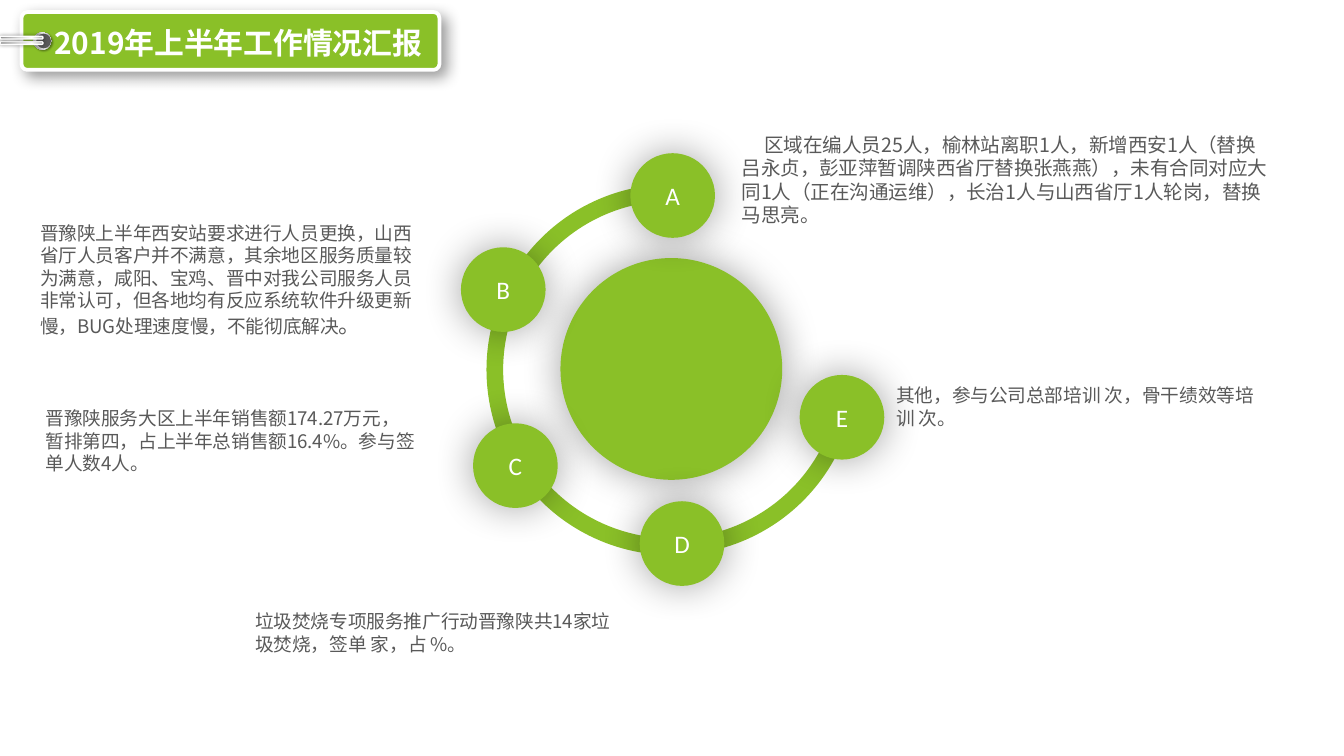
from lxml.etree import SubElement
from pptx import Presentation
from pptx.dml.color import RGBColor
from pptx.enum.shapes import MSO_SHAPE
from pptx.enum.text import MSO_ANCHOR, MSO_AUTO_SIZE, PP_ALIGN
from pptx.oxml.ns import qn
from pptx.util import Inches, Pt

CELL = 0.1  # side of one grid cell in inches: the slide is 100 columns wide
GREEN = RGBColor(0x8A, 0xC0, 0x28)
GREY = RGBColor(0x59, 0x59, 0x59)
WHITE = RGBColor(0xFF, 0xFF, 0xFF)
CJK = "Noto Sans CJK SC"
LATIN = "Calibri"

RIM_STOPS = [(0, "FFFFFF"), (17, "A6A6A6"), (35, "F2F2F2"),
             (55, "A6A6A6"), (75, "F2F2F2"), (100, "A6A6A6")]
PIN_STOPS = [(0, "808080"), (23, "A6A6A6"), (52, "D9D9D9"),
             (74, "FFFFFF"), (100, "A6A6A6")]

NODE_SIZE = 6.3
NODES = [("E", 59.5, 27.9), ("D", 47.6, 37.3), ("C", 35.2, 31.5),
         ("B", 34.3, 18.4), ("A", 46.9, 11.4)]

# column, row, width, font size, first-line indent, text, larger ending
CAPTIONS = [
    (54.2, 9.4, 41.2, 10.5, 1.7,
     "区域在编人员25人，榆林站离职1人，新增西安1人（替换吕永贞，彭亚萍暂调陕西省厅替换张燕燕），"
     "未有合同对应大同1人（正在沟通运维），长治1人与山西省厅1人轮岗，替换马思亮。", ""),
    (65.7, 28.1, 29.7, 10, 0,
     "其他，参与公司总部培训 次，骨干绩效等培训 次。", ""),
    (18, 44.9, 29.7, 10, 0,
     "垃圾焚烧专项服务推广行动晋豫陕共14家垃圾焚烧，签单 家，占 %。", ""),
    (2.4, 29.8, 29.7, 10, 0,
     "晋豫陕服务大区上半年销售额174.27万元，暂排第四，占上半年总销售额16.4%。"
     "参与签单人数4人。", ""),
    (2, 16, 29.7, 10, 0,
     "晋豫陕上半年西安站要求进行人员更换，山西省厅人员客户并不满意，其余地区服务质量较为满意，"
     "咸阳、宝鸡、晋中对我公司服务人员非常认可，但各地均有反应系统软件升级更新慢，"
     "BUG处理速度慢，不能彻底解决", "。"),
]


def grid(*cells):
    return [Inches(c * CELL) for c in cells]


def add_shadow(sp, alpha, blur, dist=0, angle=0):
    """Add a black outer shadow: alpha in percent, lengths in points."""
    effects = sp._element.spPr.find(qn("a:effectLst"))
    shadow = SubElement(effects, qn("a:outerShdw"), blurRad=str(Pt(blur)),
                        dist=str(Pt(dist)), dir=str(angle * 60000),
                        algn="ctr", rotWithShape="0")
    color = SubElement(shadow, qn("a:srgbClr"), val="000000")
    SubElement(color, qn("a:alpha"), val=str(alpha * 1000))


def add_solid(s, kind, box, color=GREEN, rotation=0, adjust=()):
    sp = s.shapes.add_shape(kind, *grid(*box))
    sp.shadow.inherit = False
    sp.fill.solid()
    sp.fill.fore_color.rgb = color
    sp.line.fill.background()
    sp.rotation = rotation
    for i, value in enumerate(adjust):
        sp.adjustments[i] = value
    return sp


def set_outline(sp, width):
    sp.line.color.rgb = WHITE
    sp.line.width = Pt(width)


def set_gradient(sp, stops, angle):
    sp.fill.gradient()
    sp.fill.gradient_angle = 360 - angle
    gs_list = sp._element.spPr.find(qn("a:gradFill")).find(qn("a:gsLst"))
    for gs in list(gs_list):
        gs_list.remove(gs)
    for position, color in stops:
        gs = SubElement(gs_list, qn("a:gs"), pos=str(position * 1000))
        SubElement(gs, qn("a:srgbClr"), val=color)


def format_run(r, size, color, font=CJK, bold=False):
    r.font.size = Pt(size)
    r.font.bold = bold
    r.font.color.rgb = color
    r.font.name = font
    SubElement(r._r.get_or_add_rPr(), qn("a:ea"), typeface=font)


def add_node(s, letter, col, row):
    sp = add_solid(s, MSO_SHAPE.OVAL, (col, row, NODE_SIZE, NODE_SIZE))
    add_shadow(sp, 37, 22)
    tf = sp.text_frame
    tf.text = letter
    tf.vertical_anchor = MSO_ANCHOR.MIDDLE
    p = tf.paragraphs[0]
    p.alignment = PP_ALIGN.CENTER
    format_run(p.runs[0], 13.5, WHITE, LATIN)


def add_caption(s, col, row, width, size, indent, text, ending):
    tf = s.shapes.add_textbox(*grid(col, row, width, 10)).text_frame
    tf.word_wrap = True
    tf.text = text
    p = tf.paragraphs[0]
    if indent:
        p._p.get_or_add_pPr().set("indent", str(Inches(indent * CELL)))
    format_run(p.runs[0], size, GREY)
    if ending:
        r = p.add_run()
        r.text = ending
        format_run(r, 12, GREY)


def add_ring(s):
    hub = add_solid(s, MSO_SHAPE.OVAL, (41.7, 19.2, 16.5, 16.5))
    add_shadow(hub, 37, 22)
    add_solid(s, MSO_SHAPE.BLOCK_ARC, (36.2, 13.7, 27.6, 27.6),
              rotation=270, adjust=(61.485, 214.427, 0.045))
    for node in NODES:
        add_node(s, *node)


def add_tag(s):
    """Draw the title tag with its eyelet and the two pins through it."""
    tag = add_solid(s, MSO_SHAPE.ROUNDED_RECTANGLE, (1.6, 0.9, 31.1, 4.3),
                    adjust=(0.1,))
    set_outline(tag, 2)
    add_shadow(tag, 40, 8, 4, 45)

    rim = add_solid(s, MSO_SHAPE.OVAL, (2.5, 2.4, 1.3, 1.3), rotation=270)
    set_gradient(rim, RIM_STOPS, 45)
    add_shadow(rim, 40, 1, 1, 45)
    add_solid(s, MSO_SHAPE.OVAL, (2.7, 2.5, 1.1, 1.1), GREY, 270)

    for row in (1.6, 1.2):
        pin = add_solid(s, MSO_SHAPE.ROUNDED_RECTANGLE, (1.5, row, 0.2, 3.2),
                        rotation=270, adjust=(0.5,))
        set_gradient(pin, PIN_STOPS, 90)
        set_outline(pin, 0.75)
        add_shadow(pin, 40, 2)


def set_title(s, text):
    title = s.shapes.title
    title.left, title.top, title.width, title.height = grid(2.1, 1.3, 31.3, 3.7)
    s.shapes._spTree.append(title._element)  # bring in front of the tag
    tf = title.text_frame
    tf.text = text
    tf.word_wrap = True
    tf.auto_size = MSO_AUTO_SIZE.NONE
    tf.vertical_anchor = MSO_ANCHOR.TOP
    p = tf.paragraphs[0]
    p.alignment = PP_ALIGN.CENTER
    format_run(p.runs[0], 16, WHITE, bold=True)


def main():
    prs = Presentation()
    prs.slide_width = Inches(100 * CELL)
    prs.slide_height = prs.slide_width * 9 // 16
    s = prs.slides.add_slide(prs.slide_layouts.get_by_name("Title Only"))
    add_ring(s)
    for caption in CAPTIONS:
        add_caption(s, *caption)
    add_tag(s)
    set_title(s, "2019年上半年工作情况汇报")
    prs.save("out.pptx")


if __name__ == "__main__":
    main()
